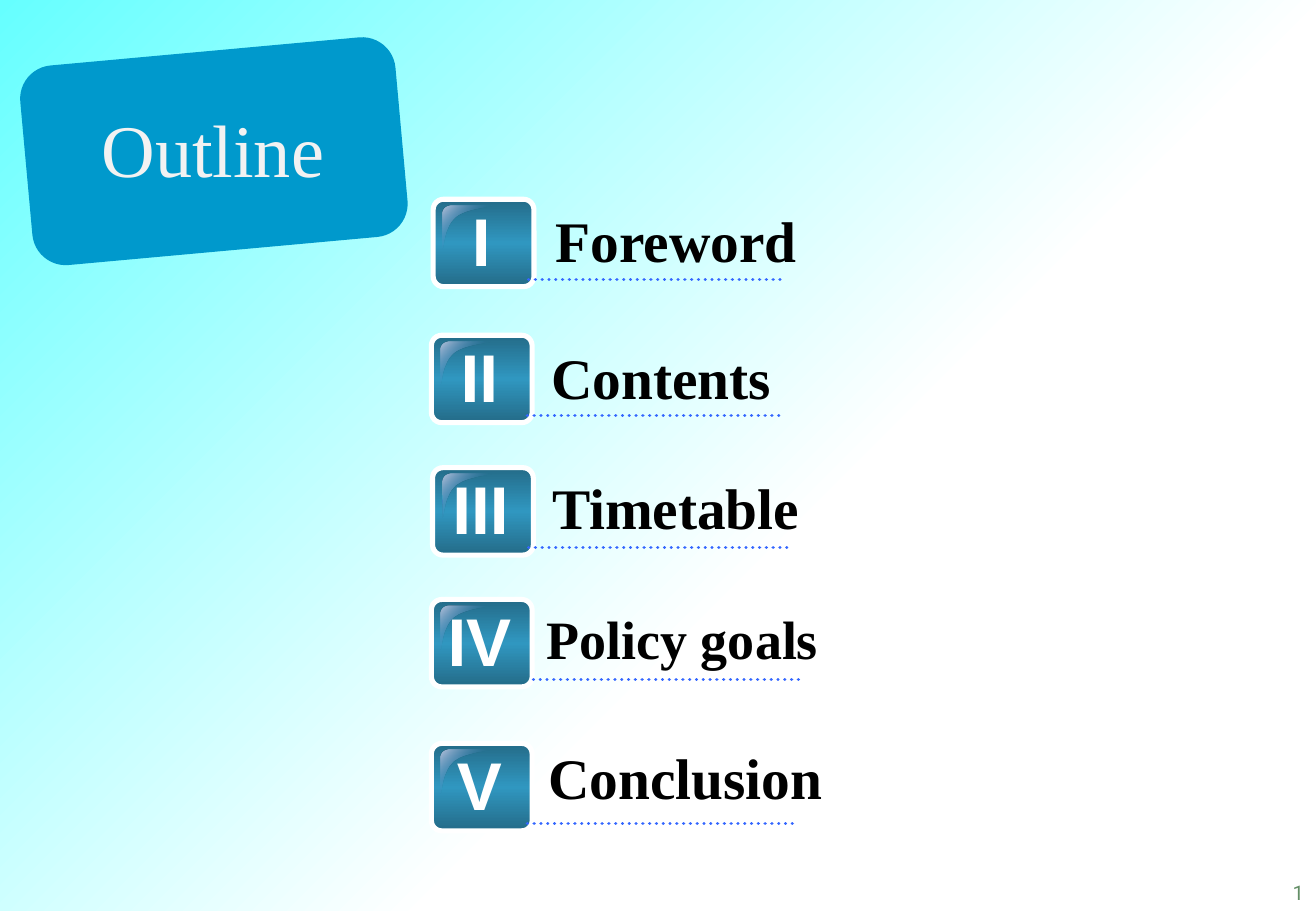
from collections import namedtuple
from copy import deepcopy
from dataclasses import dataclass

from lxml.etree import Element, SubElement
from pptx import Presentation
from pptx.dml.color import RGBColor
from pptx.enum.dml import MSO_LINE
from pptx.enum.shapes import MSO_CONNECTOR, MSO_SHAPE
from pptx.enum.text import MSO_ANCHOR, MSO_AUTO_SIZE, PP_ALIGN
from pptx.oxml.ns import qn
from pptx.util import Inches, Pt

# Grid of square cells: 75 rows fill the height of the slide
WIDE, HIGH = Inches(10.83), Inches(7.5)
CELL = HIGH / 75


@dataclass(frozen=True)
class Theme:
    serif: str = "Times New Roman"
    sans: str = "Arial"
    small: str = "Roboto"
    sky: tuple = ((0, "66FFFF"), (0.6, "FFFFFF"))
    badge: tuple = ((0, "246B88"), (0.5, "3097C0"), (1, "246B88"))
    gloss: tuple = ((0, "BBC7DE"), (0.5, "4F81BD"), (1, "BBC7DE"))
    plate: str = "0099CC"
    dots: str = "3366FF"
    white: str = "FFFFFF"
    black: str = "000000"
    pale: str = "F2F2F2"
    green: str = "648F67"
    head: int = 44
    mark: int = 40
    foot: int = 12


THEME = Theme()

# left, top: badge; start, end: dotted line; text, high, room: label box
Item = namedtuple("Item", "mark label left top start end text high room size")
ITEMS = (
    Item("I", "Foreword", 35.65, 16.4, 43.5, 64.6, 44.75, 16.4, 25.1, 34),
    Item("II", "Contents", 35.5, 27.6, 43.4, 64.3, 44.4, 27.65, 20.5, 34),
    Item("III", "Timetable", 35.6, 38.5, 43.5, 64.9, 44.45, 38.4, 29.4, 34),
    Item("IV", "Policy goals", 35.5, 49.35, 43.9, 65.8, 44, 49.35, 27.2, 32),
    Item("V", "Conclusion", 35.5, 61.2, 43.4, 65.5, 44.15, 60.6, 29.7, 34),
)
GLYPH = {"I": 1.55, "V": 3.7}  # numeral widths in cells

# Shine on a badge: corners, and the two handles of each curved side
CORNERS = ((1.6, 0.5), (0.8, 1.2), (0.8, 4.1), (1.9, 1.5), (4.9, 0.5))
HANDLES = (
    ((1.1, 0.5), (0.8, 0.8)),
    None,
    ((1, 4.1), (0.9, 2.4)),
    ((2.9, 0.7), (4.9, 0.7)),
)


def grid(*cells):
    return [round(cell * CELL) for cell in cells]


def shade(fill, stops, angle):
    """Fill with a gradient; the angle runs clockwise."""
    fill.gradient()
    fill.gradient_angle = 360 - angle
    nodes = fill.gradient_stops[0]._gs.getparent()
    while len(nodes) < len(stops):
        nodes.append(deepcopy(nodes[0]))
    for stop, (place, color) in zip(fill.gradient_stops, stops):
        stop.position = place
        stop.color.rgb = RGBColor.from_string(color)


def write(shape, text, font, size, color, bold=False, align=PP_ALIGN.LEFT,
          wrap=True, anchor=MSO_ANCHOR.TOP):
    frame = shape.text_frame
    frame.auto_size = MSO_AUTO_SIZE.NONE
    frame.word_wrap = wrap
    frame.vertical_anchor = anchor
    para = frame.paragraphs[0]
    para.alignment = align
    run = para.add_run()
    run.text = text
    run.font.name = font
    run.font.size = Pt(size)
    run.font.bold = bold
    run.font.color.rgb = RGBColor.from_string(color)


def block(shapes, *box):
    shape = shapes.add_shape(MSO_SHAPE.ROUNDED_RECTANGLE, *grid(*box))
    shape.shadow.inherit = False
    return shape


def gloss(shapes, left, top):
    spots = [grid(left + x, top + y) for x, y in CORNERS]
    path = shapes.build_freeform(*spots[0])
    path.add_line_segments(spots[1:], close=True)
    shape = path.convert_to_shape()
    # Bend the sides that have handles
    sides = list(shape._element.iter(qn("a:lnTo")))
    for side, pair in zip(sides, HANDLES):
        if pair:
            side.tag = qn("a:cubicBezTo")
            for spot, (x, y) in enumerate(pair):
                across, down = grid(left + x, top + y)
                knot = Element(qn("a:pt"))
                knot.set("x", str(across - shape.left))
                knot.set("y", str(down - shape.top))
                side.insert(spot, knot)
    shape.shadow.inherit = False
    shape.line.fill.background()
    shade(shape.fill, THEME.gloss, 45)
    # The middle of the shine is clear
    tint = shape.fill.gradient_stops[1]._gs[0]
    SubElement(tint, qn("a:alpha")).set("val", "0")


def badge(shapes, item):
    left, top = item.left, item.top
    shape = block(shapes, left, top, 8.3, 7.2)
    shape.adjustments[0] = 0.12
    shade(shape.fill, THEME.badge, 90)
    shape.line.color.rgb = RGBColor.from_string(THEME.white)
    shape.line.width = Pt(3)
    gloss(shapes, left, top)
    # Numeral, centred on the badge
    room = 2 + sum(GLYPH[sign] for sign in item.mark)
    box = shapes.add_textbox(*grid(left + 3.95 - room / 2, top - 0.5, room, 7.7))
    write(box, item.mark, THEME.sans, THEME.mark, THEME.white, True,
          PP_ALIGN.CENTER, False)


def rule(shapes, start, end, y):
    line = shapes.add_connector(MSO_CONNECTOR.STRAIGHT, *grid(start, y, end, y))
    line.line.color.rgb = RGBColor.from_string(THEME.dots)
    line.line.width = Pt(2)
    line.line.dash_style = MSO_LINE.ROUND_DOT
    line._element.spPr.find(qn("a:ln")).set("cap", "rnd")
    SubElement(line._element.spPr, qn("a:effectLst"))


def entry(slide, item):
    shapes = slide.shapes.add_group_shape().shapes
    badge(shapes, item)
    rule(shapes, item.start, item.end, item.top + 6.6)
    box = shapes.add_textbox(*grid(item.text, item.high, item.room, 6.7))
    write(box, item.label, THEME.serif, item.size, THEME.black, True)


def title(slide):
    # Tilted plate
    plate = block(slide.shapes, 2.1, 4.2, 31, 16.5)
    plate.rotation = 174.8
    plate.fill.solid()
    plate.fill.fore_color.rgb = RGBColor.from_string(THEME.plate)
    plate.line.fill.background()
    # Title, brought in front of the plate
    head = slide.shapes.title
    head.left, head.top, head.width, head.height = grid(7.35, 8, 20.5, 8.4)
    write(head, "Outline", THEME.serif, THEME.head, THEME.pale)
    plate._element.addnext(head._element)


def number(slide):
    box = slide.shapes.add_textbox(*grid(99.3, 72, 9, 2.7))
    write(box, "1", THEME.small, THEME.foot, THEME.green,
          align=PP_ALIGN.RIGHT, anchor=MSO_ANCHOR.MIDDLE)
    para = box.text_frame.paragraphs[0]
    para.line_spacing = 1.15
    # Turn the run into a live slide number
    field = para.runs[0]._r
    field.tag = qn("a:fld")
    field.set("id", "{B6F15528-21DE-4FAA-801E-634DDDAF4B2B}")
    field.set("type", "slidenum")


def main():
    deck = Presentation()
    deck.slide_width, deck.slide_height = WIDE, HIGH
    slide = deck.slides.add_slide(deck.slide_layouts.get_by_name("Title Only"))
    shade(slide.background.fill, THEME.sky, 45)
    number(slide)
    for item in ITEMS:
        entry(slide, item)
    title(slide)
    deck.save("out.pptx")


if __name__ == "__main__":
    main()
